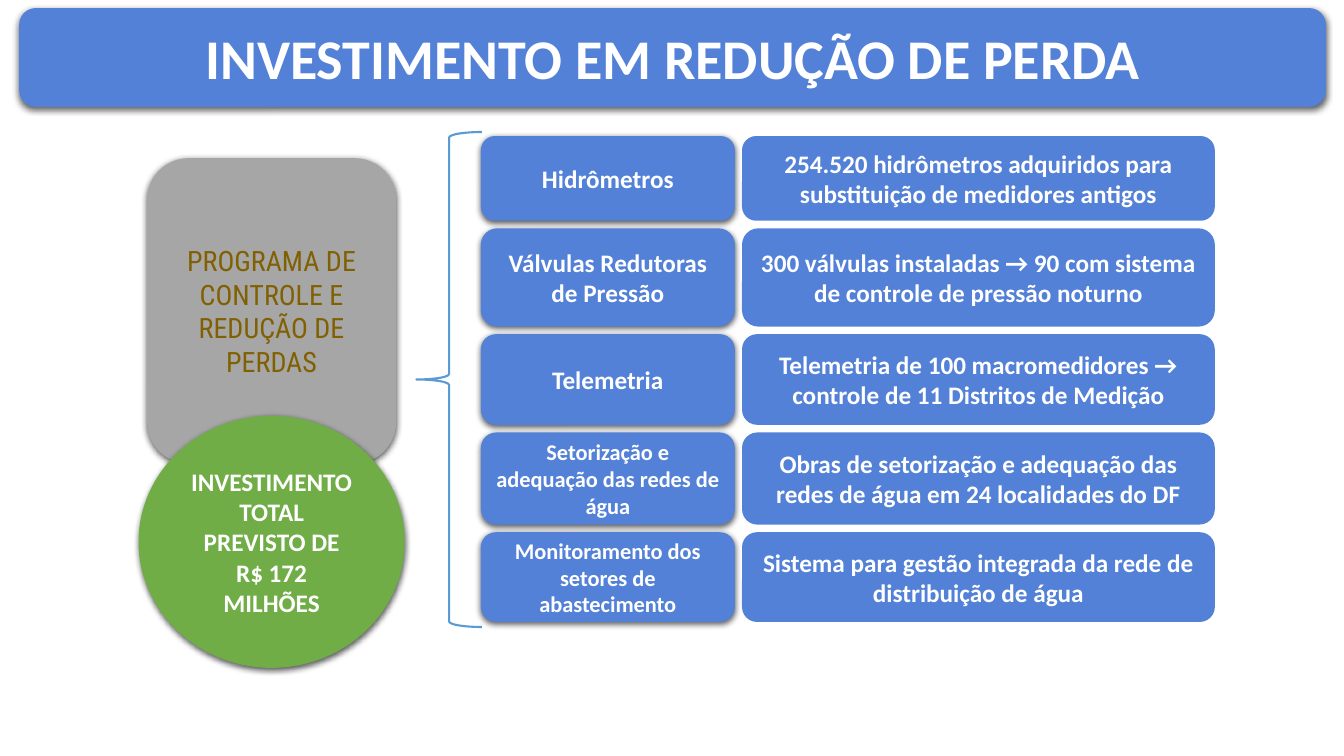
import dataclasses

import pptx
import pptx.dml.color
import pptx.enum.shapes
import pptx.enum.text
import pptx.oxml
import pptx.oxml.ns
import pptx.util

RGBColor = pptx.dml.color.RGBColor
Kind = pptx.enum.shapes.MSO_SHAPE

BLUE = RGBColor(0x53, 0x81, 0xD7)
GREY = RGBColor(0xA6, 0xA6, 0xA6)
GREEN = RGBColor(0x70, 0xAD, 0x47)
OCHRE = RGBColor(0x80, 0x60, 0x00)
SKY = RGBColor(0x5B, 0x9B, 0xD5)
WHITE = RGBColor(0xFF, 0xFF, 0xFF)

SLIDE_WIDTH = pptx.util.Inches(13.33)
SLIDE_HEIGHT = pptx.util.Inches(7.5)


@dataclasses.dataclass(frozen=True)
class Area:
    """Percentages of the slide's width (left, width) and height (top, height)."""

    left: float
    top: float
    width: float
    height: float


@dataclasses.dataclass(frozen=True)
class Panel:
    text: str
    area: Area
    kind: Kind = Kind.ROUNDED_RECTANGLE
    fill: RGBColor = BLUE
    line: RGBColor | None = None
    shadow: bool = True
    size: int = 18
    font: str = "Calibri"
    color: RGBColor = WHITE
    bold: bool = True


@dataclasses.dataclass(frozen=True)
class Action:
    label: str
    detail: str
    height: float
    label_size: int = 18


TITLE = Panel("INVESTIMENTO EM REDUÇÃO DE PERDA",
              Area(1.43, 1.07, 97.22, 13.07), size=40)
PROGRAMME = Panel("PROGRAMA DE CONTROLE E REDUÇÃO DE PERDAS",
                  Area(10.95, 20.93, 18.53, 40.4), fill=GREY, size=20,
                  font="Roboto Condensed", color=OCHRE, bold=False)
INVESTMENT = Panel("INVESTIMENTO TOTAL PREVISTO DE R$ 172 MILHÕES",
                   Area(10.35, 55.07, 19.73, 33.2), kind=Kind.OVAL,
                   fill=GREEN, line=GREEN)
BRACE = Area(30.98, 17.47, 4.88, 65.47)

ACTIONS = [
    Action("Hidrômetros",
           "254.520 hidrômetros adquiridos para substituição de medidores antigos", 11.2),
    Action("Válvulas Redutoras de Pressão",
           "300 válvulas instaladas → 90 com sistema de controle de pressão noturno", 13),
    Action("Telemetria",
           "Telemetria de 100 macromedidores → controle de 11 Distritos de Medição", 12),
    Action("Setorização e adequação das redes de água",
           "Obras de setorização e adequação das redes de água em 24 localidades do DF",
           12.2, 16),
    Action("Monitoramento dos setores de abastecimento",
           "Sistema para gestão integrada da rede de distribuição de água", 11.87, 16),
]
LABEL_LEFT, LABEL_WIDTH = 35.78, 18.9
DETAIL_LEFT, DETAIL_WIDTH = 55.21, 35.18
FIRST_ROW_TOP, ROW_GAP = 18, 1


def set_all(target: object, values: dict[str, object]) -> None:
    for name, value in values.items():
        setattr(target, name, value)


def add_shadow(box: pptx.shapes.autoshape.Shape) -> None:
    """Put a soft shadow straight below the shape."""
    effects = box._element.spPr.find(pptx.oxml.ns.qn("a:effectLst"))
    blur, distance = pptx.util.Pt(4.5), pptx.util.Pt(1.5)
    effects.append(pptx.oxml.parse_xml(
        f'<a:outerShdw {pptx.oxml.ns.nsdecls("a")} blurRad="{blur}" dist="{distance}" '
        'dir="5400000" algn="ctr" rotWithShape="0">'
        '<a:srgbClr val="000000"><a:alpha val="63000"/></a:srgbClr></a:outerShdw>'))


def add_outline(page: pptx.slide.Slide, kind: Kind,
                area: Area) -> pptx.shapes.autoshape.Shape:
    """Add a preset shape without shadow at the given shares of the slide."""
    box = page.shapes.add_shape(
        kind,
        round(SLIDE_WIDTH * area.left / 100), round(SLIDE_HEIGHT * area.top / 100),
        round(SLIDE_WIDTH * area.width / 100), round(SLIDE_HEIGHT * area.height / 100))
    box.shadow.inherit = False
    return box


def draw_panel(page: pptx.slide.Slide, panel: Panel) -> None:
    box = add_outline(page, panel.kind, panel.area)
    box.fill.solid()
    box.fill.fore_color.rgb = panel.fill
    if panel.line is None:
        box.line.fill.background()
    else:
        box.line.color.rgb = panel.line
        box.line.width = pptx.util.Pt(0.75)
    if panel.shadow:
        add_shadow(box)
    set_all(box.text_frame, {"word_wrap": True,
                             "vertical_anchor": pptx.enum.text.MSO_ANCHOR.MIDDLE})
    para = box.text_frame.paragraphs[0]
    para.alignment = pptx.enum.text.PP_ALIGN.CENTER
    span = para.add_run()
    span.text = panel.text
    set_all(span.font, {"name": panel.font, "size": pptx.util.Pt(panel.size),
                        "bold": panel.bold})
    span.font.color.rgb = panel.color


def draw_brace(page: pptx.slide.Slide) -> None:
    brace = add_outline(page, Kind.LEFT_BRACE, BRACE)
    brace.fill.background()
    brace.line.color.rgb = SKY
    brace.line.width = pptx.util.Pt(1.5)


def draw_actions(page: pptx.slide.Slide) -> None:
    top = FIRST_ROW_TOP
    for action in ACTIONS:
        draw_panel(page, Panel(action.label,
                               Area(LABEL_LEFT, top, LABEL_WIDTH, action.height),
                               size=action.label_size))
        draw_panel(page, Panel(action.detail,
                               Area(DETAIL_LEFT, top, DETAIL_WIDTH, action.height),
                               shadow=False))
        top += action.height + ROW_GAP


def main() -> None:
    deck = pptx.Presentation()
    set_all(deck, {"slide_width": SLIDE_WIDTH, "slide_height": SLIDE_HEIGHT})
    page = deck.slides.add_slide(deck.slide_layouts[6])
    draw_panel(page, PROGRAMME)
    draw_actions(page)
    draw_brace(page)
    draw_panel(page, INVESTMENT)
    draw_panel(page, TITLE)
    deck.save("out.pptx")


if __name__ == "__main__":
    main()
